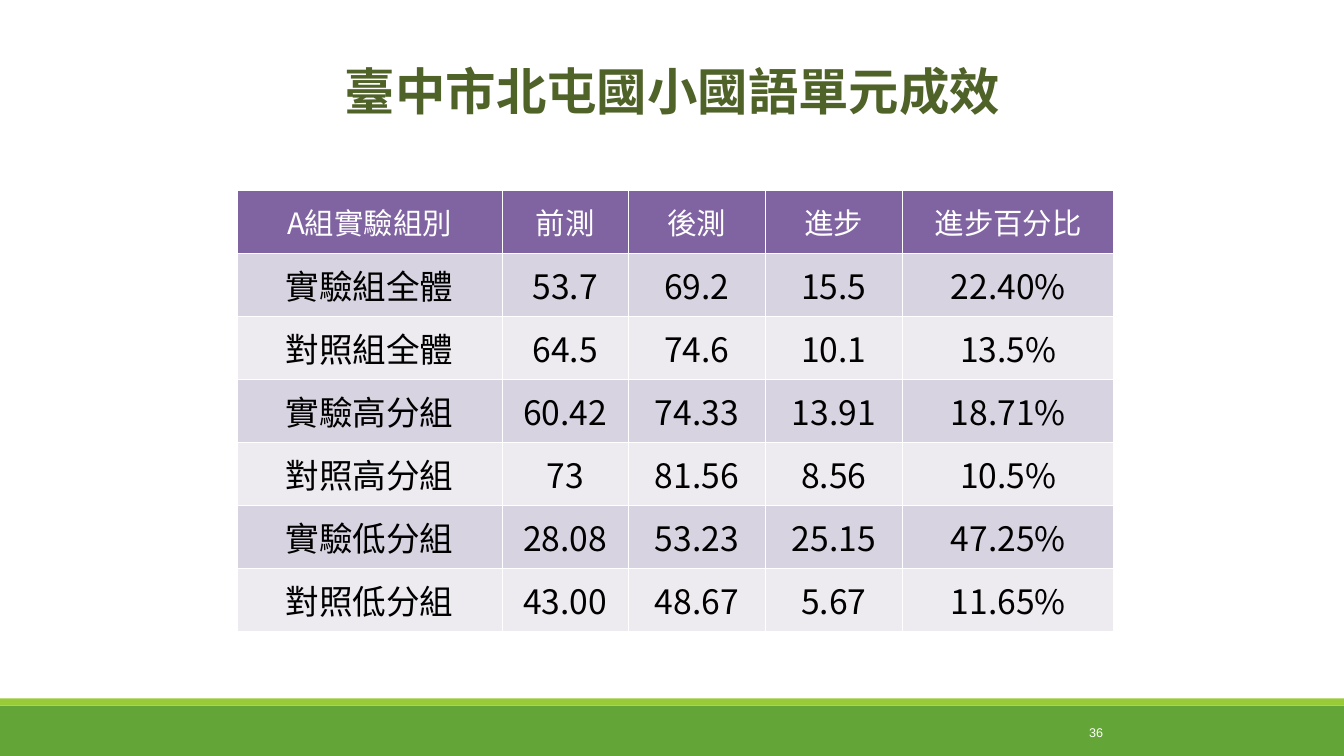
from lxml.etree import SubElement
from pptx import Presentation
from pptx.dml.color import RGBColor
from pptx.enum.shapes import MSO_SHAPE
from pptx.enum.text import MSO_ANCHOR as ANCHOR, PP_ALIGN as ALIGN
from pptx.oxml.ns import qn
from pptx.util import Inches, Pt

COLORS = {
    "green": "63A537", "lime": "99CB38", "title": "4F6228",
    "header": "8064A2", "band_dark": "D8D3E0", "band_light": "EDEAF0",
    "white": "FFFFFF", "black": "000000",
}
CJK = "Noto Sans CJK SC"
ROWS = [
    ["A組實驗組別", "前測", "後測", "進步", "進步百分比"],
    ["實驗組全體", "53.7", "69.2", "15.5", "22.40%"],
    ["對照組全體", "64.5", "74.6", "10.1", "13.5%"],
    ["實驗高分組", "60.42", "74.33", "13.91", "18.71%"],
    ["對照高分組", "73", "81.56", "8.56", "10.5%"],
    ["實驗低分組", "28.08", "53.23", "25.15", "47.25%"],
    ["對照低分組", "43.00", "48.67", "5.67", "11.65%"],
]
COL_WIDTHS = [2.63, 1.25, 1.36, 1.36, 2.1]
ROW_HEIGHT = 0.625


def write(tf, text, size, color, font=CJK, align=ALIGN.CENTER, bold=False):
    """Put one formatted run in the first paragraph of a text frame."""
    p = tf.paragraphs[0]
    p.alignment = align
    r = p.add_run()
    r.text = text
    r.font.size = Pt(size)
    r.font.bold = bold
    r.font.color.rgb = RGBColor.from_string(COLORS[color])
    r.font.name = font
    SubElement(r.font._element, qn("a:ea"), typeface=font)


def add_borders(cell):
    """Draw a thin white line on all four sides of a table cell."""
    tc_pr = cell._tc.get_or_add_tcPr()
    for side in ("lnL", "lnR", "lnT", "lnB"):
        ln = SubElement(tc_pr, qn(f"a:{side}"), w=str(Pt(1)))
        fill = SubElement(ln, qn("a:solidFill"))
        SubElement(fill, qn("a:srgbClr"), val=COLORS["white"])


prs = Presentation()
prs.slide_width, prs.slide_height = Inches(13.33), Inches(7.5)
slide = prs.slides.add_slide(prs.slide_layouts[5])

# Footer bands
for top, height, color in [(7, 0.5, "green"), (6.93, 0.07, "lime")]:
    band = slide.shapes.add_shape(
        MSO_SHAPE.RECTANGLE, 0, Inches(top), prs.slide_width, Inches(height))
    band.shadow.inherit = False
    band.fill.solid()
    band.fill.fore_color.rgb = RGBColor.from_string(COLORS[color])
    band.line.fill.background()

# Title
title = slide.shapes.title
title.left, title.top = Inches(1.67), Inches(0.4)
title.width, title.height = Inches(10), Inches(0.96)
title.top = Inches(0.42)
title.text_frame.vertical_anchor = ANCHOR.MIDDLE
write(title.text_frame, "臺中市北屯國小國語單元成效", 36, "title", bold=True)

# Results table
table = slide.shapes.add_table(
    len(ROWS), len(COL_WIDTHS), Inches(2.35), Inches(1.89),
    Inches(sum(COL_WIDTHS)), Inches(ROW_HEIGHT * len(ROWS))).table
for column, width in zip(table.columns, COL_WIDTHS):
    column.width = Inches(width)
for i, values in enumerate(ROWS):
    table.rows[i].height = Inches(ROW_HEIGHT)
    if i == 0:
        fill, size, color = "header", 21, "white"
    else:
        fill, size, color = ("band_dark" if i % 2 else "band_light"), 24, "black"
    for j, value in enumerate(values):
        cell = table.cell(i, j)
        cell.margin_left = cell.margin_right = Inches(0.07)
        cell.margin_top = cell.margin_bottom = Inches(0.04)
        cell.vertical_anchor = ANCHOR.MIDDLE
        add_borders(cell)
        cell.fill.solid()
        cell.fill.fore_color.rgb = RGBColor.from_string(COLORS[fill])
        write(cell.text_frame, value, size, color)

# Page number
number = slide.shapes.add_textbox(
    Inches(10.61), Inches(7.14), Inches(0.43), Inches(0.25))
number.text_frame.word_wrap = True
number.text_frame.vertical_anchor = ANCHOR.MIDDLE
write(number.text_frame, "36", 9, "white", font="Arial", align=ALIGN.RIGHT)

prs.save("out.pptx")
